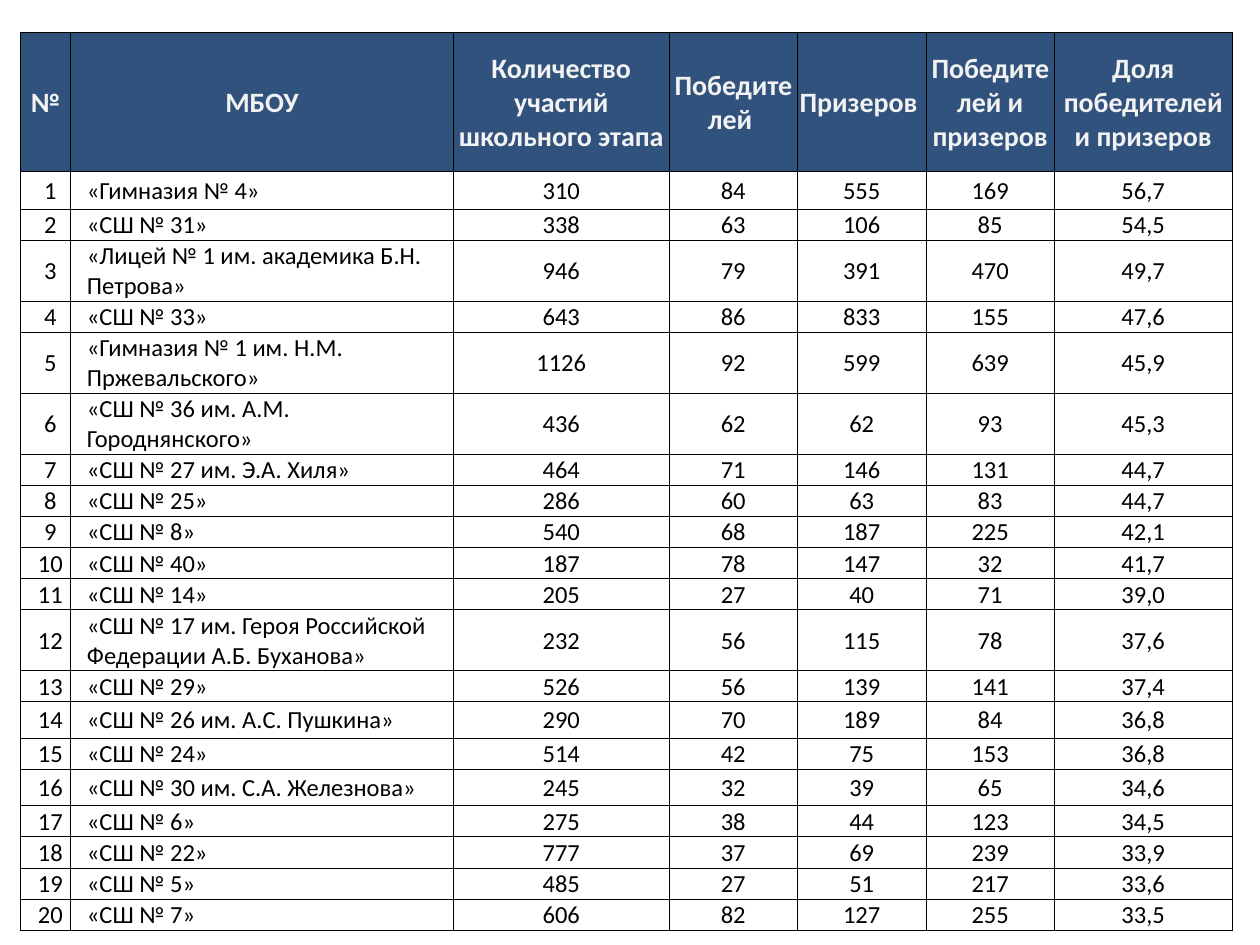
from lxml.etree import SubElement
from pptx import Presentation
from pptx.dml.color import RGBColor as RGB
from pptx.enum.text import MSO_ANCHOR as Anchor, PP_ALIGN as Align
from pptx.oxml.ns import qn
from pptx.util import Inches, Pt

NAVY = RGB(0x30, 0x52, 0x7D)
PALE = RGB(0xF2, 0xF2, 0xF2)
BLACK = RGB(0, 0, 0)
FONT = "Calibri"

WIDTHS = [0.4, 3.04, 1.71, 1.02, 1.02, 1.02, 1.41]
HEAD_H, ROW_H = 1.1, 0.24
TALL = {1: 0.3, 3: 0.48, 5: 0.48, 6: 0.48, 12: 0.48, 14: 0.29, 16: 0.29}
INDENTS = {0: 0.08, 1: 0.12}

HEADS = ["№", "МБОУ", "Количество участий школьного этапа", "Победителей ",
         "Призеров ", "Победителей и призеров", "Доля победителей и призеров"]
SCHOOLS = [
    ("«Гимназия № 4»", 310, 84, 555, 169, "56,7"),
    ("«СШ № 31»", 338, 63, 106, 85, "54,5"),
    ("«Лицей № 1 им. академика Б.Н. Петрова»", 946, 79, 391, 470, "49,7"),
    ("«СШ № 33»", 643, 86, 833, 155, "47,6"),
    ("«Гимназия № 1 им. Н.М. Пржевальского»", 1126, 92, 599, 639, "45,9"),
    ("«СШ № 36 им. А.М. Городнянского»", 436, 62, 62, 93, "45,3"),
    ("«СШ № 27 им. Э.А. Хиля»", 464, 71, 146, 131, "44,7"),
    ("«СШ № 25»", 286, 60, 63, 83, "44,7"),
    ("«СШ № 8»", 540, 68, 187, 225, "42,1"),
    ("«СШ № 40»", 187, 78, 147, 32, "41,7"),
    ("«СШ № 14»", 205, 27, 40, 71, "39,0"),
    ("«СШ № 17 им. Героя Российской Федерации А.Б. Буханова»",
     232, 56, 115, 78, "37,6"),
    ("«СШ № 29»", 526, 56, 139, 141, "37,4"),
    ("«СШ № 26 им. А.С. Пушкина»", 290, 70, 189, 84, "36,8"),
    ("«СШ № 24»", 514, 42, 75, 153, "36,8"),
    ("«СШ № 30 им. С.А. Железнова»", 245, 32, 39, 65, "34,6"),
    ("«СШ № 6»", 275, 38, 44, 123, "34,5"),
    ("«СШ № 22»", 777, 37, 69, 239, "33,9"),
    ("«СШ № 5»", 485, 27, 51, 217, "33,6"),
    ("«СШ № 7»", 606, 82, 127, 255, "33,5"),
]


def add_border(cell):
    """Draw a thin black line on all four sides of a cell."""
    props = cell._tc.get_or_add_tcPr()
    for side in ("lnL", "lnR", "lnT", "lnB"):
        line = SubElement(props, qn(f"a:{side}"), w=str(Pt(0.5)))
        fill = SubElement(line, qn("a:solidFill"))
        SubElement(fill, qn("a:srgbClr"), val=str(BLACK))


def fill_cell(cell, text, col, head):
    """Write and format one heading or body cell."""
    cell.margin_left = cell.margin_right = cell.margin_top = Inches(0.01)
    cell.margin_bottom = 0
    cell.vertical_anchor = Anchor.MIDDLE
    add_border(cell)
    if head:
        cell.fill.solid()
        cell.fill.fore_color.rgb = NAVY
    else:
        cell.fill.background()
    cell.text_frame.text = str(text)
    para = cell.text_frame.paragraphs[0]
    para.alignment = Align.LEFT if col == 1 and not head else Align.CENTER
    if not head and col in INDENTS:
        para._p.get_or_add_pPr().set("marL", str(Inches(INDENTS[col])))
    font = para.runs[0].font
    font.name = FONT
    font.size = Pt(16 if head else 14)
    font.bold = head
    font.color.rgb = PALE if head else BLACK


def add_results(slide, left, top, width, height):
    """Place the table of school results in the given box."""
    rows = [HEADS] + [(num, *row) for num, row in enumerate(SCHOOLS, 1)]
    table = slide.shapes.add_table(len(rows), len(HEADS), Inches(left),
                                   Inches(top), Inches(width),
                                   Inches(height)).table
    table.first_row = table.horz_banding = False
    for col, size in zip(table.columns, WIDTHS):
        col.width = Inches(size)
    for num, row in enumerate(rows):
        tall = HEAD_H if num == 0 else TALL.get(num, ROW_H)
        table.rows[num].height = Inches(tall)
        for col, text in enumerate(row):
            fill_cell(table.cell(num, col), text, col, num == 0)


def main():
    """Build the slide and save it."""
    deck = Presentation()
    deck.slide_width, deck.slide_height = Inches(10), Inches(7.5)
    slide = deck.slides.add_slide(deck.slide_layouts[6])
    add_results(slide, 0.16, 0.26, 9.62, 7.08)
    deck.save("out.pptx")


if __name__ == "__main__":
    main()
